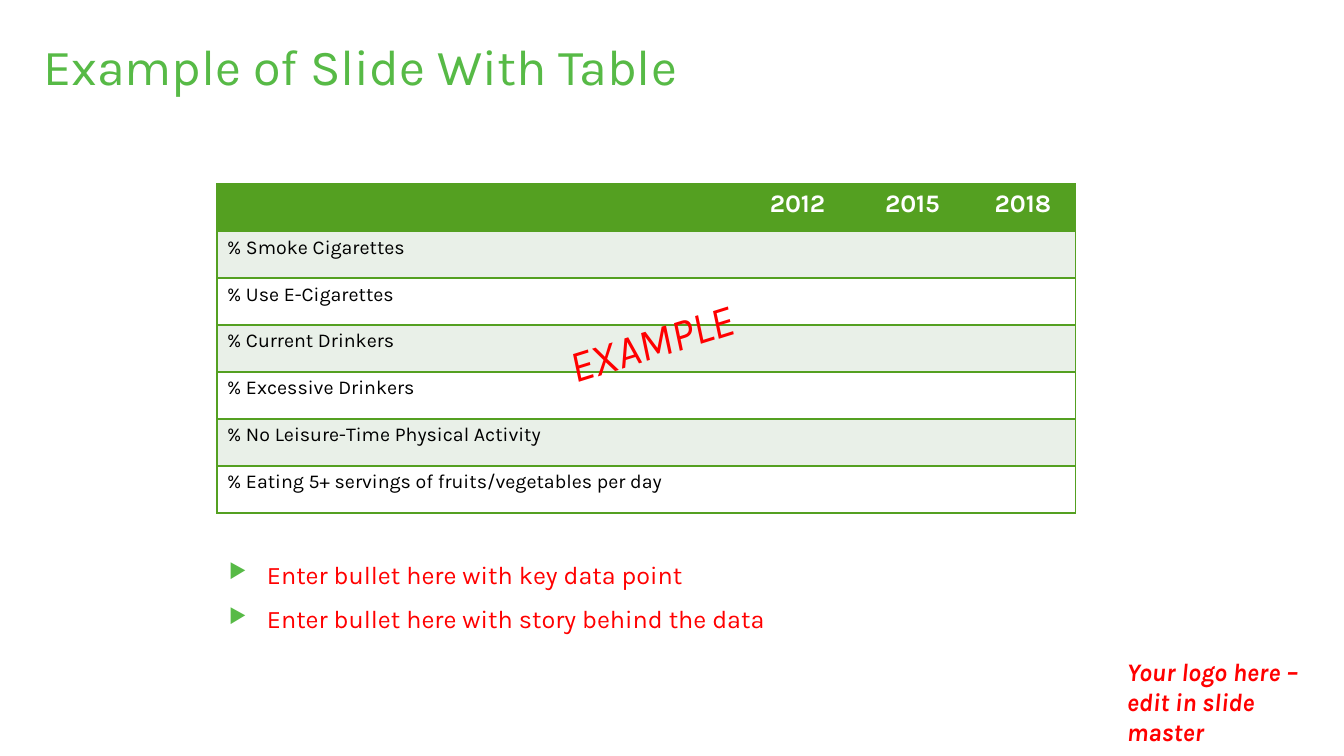
from dataclasses import dataclass

from lxml.etree import SubElement
from pptx import Presentation
from pptx.dml.color import RGBColor
from pptx.enum.text import MSO_ANCHOR as Anchor, PP_ALIGN as Align
from pptx.oxml.ns import qn
from pptx.util import Pt

EMU_PER_PX = 914400 / 100.8
FONT = "Karla"
COLORS = {
    "title": "57BA46",
    "grid": "54A021",
    "band": "E9F0E8",
    "white": "FFFFFF",
    "text": "000000",
    "prompt": "FF0000",
}
YEARS = ["2012", "2015", "2018"]
MEASURES = [
    "% Smoke Cigarettes",
    "% Use E-Cigarettes",
    "% Current Drinkers",
    "% Excessive Drinkers",
    "% No Leisure-Time Physical Activity",
    "% Eating 5+ servings of fruits/vegetables per day",
]
COLUMN_WIDTHS = [523, 115, 115, 106]
ROW_HEIGHT = 47
BULLET_INDENT = 38


@dataclass(frozen=True)
class Box:
    left: int
    top: int
    width: int
    height: int

    def emu(self) -> list[int]:
        return [px(side) for side in (self.left, self.top, self.width, self.height)]


@dataclass(frozen=True)
class Style:
    size: int
    color: str
    bold: bool = False
    italic: bool = False


@dataclass(frozen=True)
class Note:
    box: Box
    lines: tuple[str, ...]
    style: Style
    rotation: float = 0
    bulleted: bool = False


HEADER_STYLE = Style(18, "white", bold=True)
MEASURE_STYLE = Style(14, "text")
TITLE_BOX = Box(33, 30, 824, 96)
TABLE_BOX = Box(217, 184, sum(COLUMN_WIDTHS), ROW_HEIGHT * (len(MEASURES) + 1))
LOGO_NOTE = Note(
    Box(1117, 651, 218, 102),
    ("Your logo here – edit in slide master",),
    Style(18, "prompt", bold=True, italic=True),
)
KEY_POINTS = Note(
    Box(219, 554, 824, 159),
    ("Enter bullet here with key data point", "Enter bullet here with story behind the data"),
    Style(18, "prompt"),
    bulleted=True,
)
EXAMPLE_STAMP = Note(
    Box(554, 294, 295, 65), ("EXAMPLE",), Style(32, "prompt", italic=True), rotation=342.7
)


def px(length: int) -> int:
    return round(length * EMU_PER_PX)


def rgb(name: str) -> RGBColor:
    return RGBColor.from_string(COLORS[name])


def add_run(paragraph, text: str, style: Style) -> None:
    run = paragraph.add_run()
    run.text = text
    run.font.name = FONT
    run.font.size = Pt(style.size)
    run.font.bold = style.bold
    run.font.italic = style.italic
    run.font.color.rgb = rgb(style.color)


def add_bullet(paragraph) -> None:
    properties = paragraph._p.get_or_add_pPr()
    properties.set("marL", str(px(BULLET_INDENT)))
    properties.set("indent", str(-px(BULLET_INDENT)))
    color = SubElement(properties, qn("a:buClr"))
    SubElement(color, qn("a:srgbClr"), val=COLORS["title"])
    SubElement(properties, qn("a:buSzPct"), val="80000")
    SubElement(properties, qn("a:buChar"), char="▶")


def add_note(slide, note: Note) -> None:
    shape = slide.shapes.add_textbox(*note.box.emu())
    shape.rotation = note.rotation
    frame = shape.text_frame
    frame.word_wrap = True
    for index, line in enumerate(note.lines):
        paragraph = frame.add_paragraph() if index else frame.paragraphs[0]
        if note.bulleted:
            add_bullet(paragraph)
        if index:
            paragraph.space_before = Pt(10)
        add_run(paragraph, line, note.style)


def add_title(slide, text: str) -> None:
    title = slide.shapes.title
    title.left, title.top, title.width, title.height = TITLE_BOX.emu()
    frame = title.text_frame
    frame.vertical_anchor = Anchor.TOP
    paragraph = frame.paragraphs[0]
    paragraph.alignment = Align.LEFT
    add_run(paragraph, text, Style(36, "title"))


def set_borders(cell, visible_sides: str) -> None:
    properties = cell._tc.get_or_add_tcPr()
    for side in "LRTB":
        line = SubElement(properties, qn(f"a:ln{side}"), w=str(Pt(1)))
        if side in visible_sides:
            fill = SubElement(line, qn("a:solidFill"))
            SubElement(fill, qn("a:srgbClr"), val=COLORS["grid"])
        else:
            SubElement(line, qn("a:noFill"))


def add_measures_table(slide) -> None:
    rows = [["", *YEARS]] + [[measure, "", "", ""] for measure in MEASURES]
    last_column = len(COLUMN_WIDTHS) - 1
    table = slide.shapes.add_table(len(rows), len(COLUMN_WIDTHS), *TABLE_BOX.emu()).table
    for column, width in zip(table.columns, COLUMN_WIDTHS):
        column.width = px(width)
    for row_index, texts in enumerate(rows):
        table.rows[row_index].height = px(ROW_HEIGHT)
        is_header = row_index == 0
        fill = "grid" if is_header else "band" if row_index % 2 else "white"
        for column_index, text in enumerate(texts):
            cell = table.cell(row_index, column_index)
            sides = "TB" + {0: "L", last_column: "R"}.get(column_index, "")
            set_borders(cell, sides)
            cell.fill.solid()
            cell.fill.fore_color.rgb = rgb(fill)
            if text:
                paragraph = cell.text_frame.paragraphs[0]
                paragraph.alignment = Align.CENTER if is_header else Align.LEFT
                add_run(paragraph, text, HEADER_STYLE if is_header else MEASURE_STYLE)


def main() -> None:
    presentation = Presentation()
    presentation.slide_width = px(1344)
    presentation.slide_height = px(756)
    slide = presentation.slides.add_slide(presentation.slide_layouts.get_by_name("Title Only"))
    add_note(slide, LOGO_NOTE)
    add_title(slide, "Example of Slide With Table")
    add_note(slide, KEY_POINTS)
    add_measures_table(slide)
    add_note(slide, EXAMPLE_STAMP)
    presentation.save("out.pptx")


if __name__ == "__main__":
    main()
